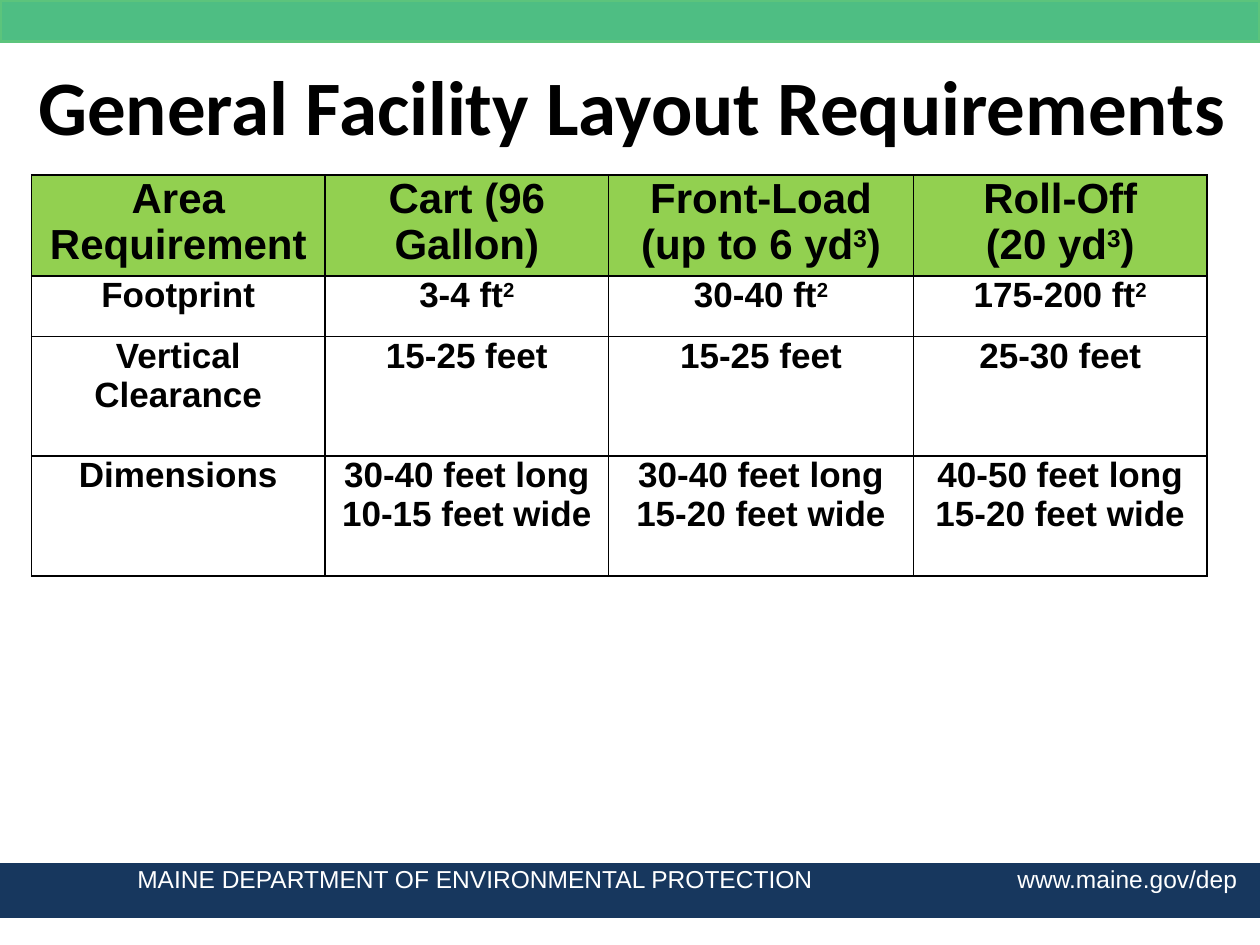
from lxml.etree import SubElement
from pptx import Presentation
from pptx.dml.color import RGBColor
from pptx.enum.shapes import MSO_SHAPE as Shape
from pptx.enum.text import MSO_ANCHOR as Anchor, PP_ALIGN as Align
from pptx.oxml.ns import qn
from pptx.util import Inches, Pt

BLACK = RGBColor(0x00, 0x00, 0x00)
WHITE = RGBColor(0xFF, 0xFF, 0xFF)
GREEN = RGBColor(0x4E, 0xBE, 0x83)
GREEN_EDGE = RGBColor(0x5C, 0xC4, 0x7C)
NAVY = RGBColor(0x17, 0x37, 0x5E)
LIME = RGBColor(0x92, 0xD0, 0x50)

COLUMN_WIDTHS = (2.33, 2.25, 2.42, 2.33)
ROW_HEIGHTS = (0.79, 0.48, 0.95, 0.95)
REQUIREMENTS = (
    ("Area Requirement", "Cart (96 Gallon)", "Front-Load\n(up to 6 yd^3^)", "Roll-Off\n(20 yd^3^)"),
    ("Footprint", "3-4 ft^2^", "30-40 ft^2^", "175-200 ft^2^"),
    ("Vertical Clearance", "15-25 feet", "15-25 feet", "25-30 feet"),
    ("Dimensions", "30-40 feet long\n10-15 feet wide", "30-40 feet long\n15-20 feet wide",
     "40-50 feet long\n15-20 feet wide"),
)


def write_text(frame, text, size, font="Arial", color=BLACK, bold=True, align=Align.CENTER, right_tab=None):
    """Fill a text frame, one paragraph a line, with ^marked^ parts raised."""
    frame.word_wrap = True
    for index, line in enumerate(text.split("\n")):
        para = frame.add_paragraph() if index else frame.paragraphs[0]
        para.alignment = align
        if right_tab is not None:
            tabs = SubElement(para._p.get_or_add_pPr(), qn("a:tabLst"))
            SubElement(tabs, qn("a:tab"), pos=str(Inches(right_tab)), algn="r")
        for position, part in enumerate(line.split("^")):
            if not part:
                continue
            span = para.add_run()
            span.text = part
            span.font.name, span.font.size, span.font.bold = font, Pt(size), bold
            span.font.color.rgb = color
            if position % 2:
                span.font._element.set("baseline", "30000")


def add_band(page, left, top, width, height, fill, edge):
    """Draw a filled strip and return it."""
    band = page.shapes.add_shape(Shape.RECTANGLE, Inches(left), Inches(top), Inches(width), Inches(height))
    band.shadow.inherit = False
    band.fill.solid()
    band.fill.fore_color.rgb = fill
    band.line.color.rgb = edge
    band.line.width = Pt(2)
    return band


def add_footer(page, left, top, width, height):
    """Draw the footer with the department on the left and its address on the right."""
    indent = 1.09
    frame = add_band(page, left, top, width, height, NAVY, NAVY).text_frame
    frame.vertical_anchor = Anchor.TOP
    frame.margin_left = Inches(indent)
    frame.margin_right = frame.margin_top = frame.margin_bottom = 0
    write_text(frame, "MAINE DEPARTMENT OF ENVIRONMENTAL PROTECTION\twww.maine.gov/dep", 14,
               color=WHITE, bold=False, align=Align.LEFT, right_tab=width - indent - 0.18)


def add_title(page, left, top, width, height):
    """Place the centred slide title."""
    box = page.shapes.add_textbox(Inches(left), Inches(top), Inches(width), Inches(height))
    box.text_frame.vertical_anchor = Anchor.MIDDLE
    write_text(box.text_frame, "General Facility Layout Requirements", 44, font="Calibri")


def add_borders(cell):
    """Give a cell thin black borders on all four sides."""
    properties = cell._tc.get_or_add_tcPr()
    for side in ("lnL", "lnR", "lnT", "lnB"):
        line = SubElement(properties, qn(f"a:{side}"), w=str(Pt(1)))
        fill = SubElement(line, qn("a:solidFill"))
        SubElement(fill, qn("a:srgbClr"), val=str(BLACK))


def add_requirements(page, left, top, width, height):
    """Build the table of requirements for each container type."""
    table = page.shapes.add_table(len(ROW_HEIGHTS), len(COLUMN_WIDTHS), Inches(left), Inches(top),
                                  Inches(width), Inches(height)).table
    table.first_row = table.horz_banding = False
    for column, column_width in zip(table.columns, COLUMN_WIDTHS):
        column.width = Inches(column_width)
    for row, row_height, texts in zip(table.rows, ROW_HEIGHTS, REQUIREMENTS):
        row.height = Inches(row_height)
        is_header = texts is REQUIREMENTS[0]
        for cell, text in zip(row.cells, texts):
            cell.margin_left = cell.margin_right = Inches(0.07)
            cell.margin_top = cell.margin_bottom = 0
            add_borders(cell)
            if is_header:
                cell.fill.solid()
                cell.fill.fore_color.rgb = LIME
            else:
                cell.fill.background()
            write_text(cell.text_frame, text, 24 if is_header else 20)


def main():
    """Build the slide and save the deck."""
    deck = Presentation()
    deck.slide_width, deck.slide_height = Inches(10), Inches(7.5)
    page = deck.slides.add_slide(deck.slide_layouts[6])
    add_band(page, 0, 0, 10, 0.33, GREEN, GREEN_EDGE)
    add_footer(page, 0, 6.86, 10, 0.41)
    add_title(page, 0.02, 0.25, 10, 1.17)
    add_requirements(page, 0.25, 1.39, sum(COLUMN_WIDTHS), sum(ROW_HEIGHTS))
    deck.save("out.pptx")


if __name__ == "__main__":
    main()
